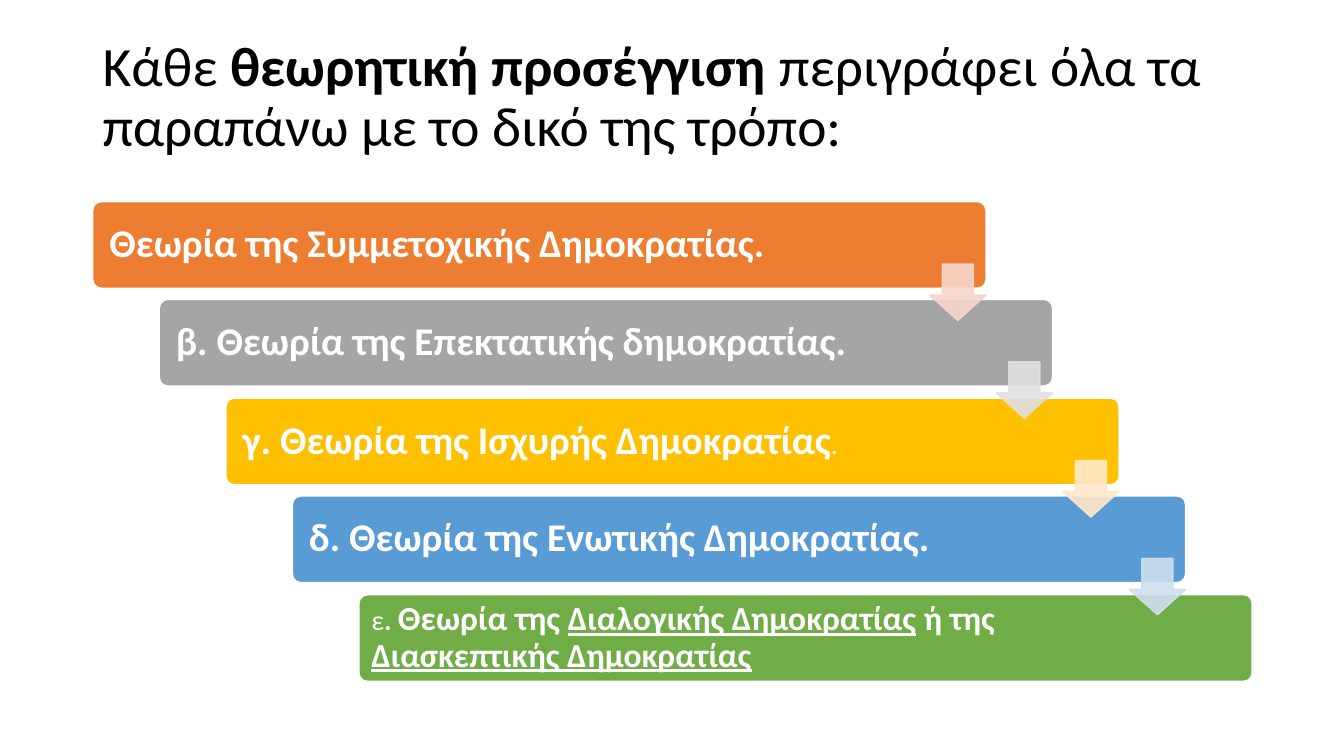
from lxml.etree import SubElement
from pptx import Presentation
from pptx.dml.color import RGBColor
from pptx.enum.shapes import MSO_SHAPE
from pptx.enum.text import MSO_ANCHOR, PP_ALIGN
from pptx.oxml.ns import qn
from pptx.util import Pt

PX = 9144  # EMU per px, 100 px to the inch

COLORS = {
    "black": "000000", "white": "FFFFFF",
    "orange": "ED7D31", "gray": "A5A5A5", "gold": "FFC000",
    "blue": "599BD5", "green": "70AD47",
    "pale_orange": "F7D5CB", "pale_gray": "E0E0E0",
    "pale_gold": "FFE8CA", "pale_blue": "CFDEEF",
}


class SlideBuilder:
    font = "Calibri"
    line_spacing = 0.9

    def __init__(self, slide):
        self.slide = slide

    def box(self, left, top, width, height):
        return [v * PX for v in (left, top, width, height)]

    def add_text(self, frame, runs, color, insets):
        """Each run is (text, size, bold, underline)."""
        frame.word_wrap = True
        frame.vertical_anchor = MSO_ANCHOR.MIDDLE
        (frame.margin_left, frame.margin_top,
         frame.margin_right, frame.margin_bottom) = [v * PX for v in insets]
        paragraph = frame.paragraphs[0]
        paragraph.alignment = PP_ALIGN.LEFT
        paragraph.line_spacing = self.line_spacing
        for text, size, bold, underline in runs:
            run = paragraph.add_run()
            run.text = text
            run.font.name = self.font
            run.font.size = Pt(size)
            run.font.bold = bold
            run.font.underline = underline
            run.font.color.rgb = RGBColor.from_string(COLORS[color])

    def title(self, place, runs):
        heading = self.slide.shapes.add_textbox(*self.box(*place))
        self.add_text(heading.text_frame, runs, "black", (10, 5, 10, 5))

    def shape(self, kind, place, adjustments, fill, line):
        shape = self.slide.shapes.add_shape(kind, *self.box(*place))
        shape.shadow.inherit = False
        for i, value in enumerate(adjustments):
            shape.adjustments[i] = value
        shape.fill.solid()
        shape.fill.fore_color.rgb = RGBColor.from_string(COLORS[fill])
        shape.line.color.rgb = RGBColor.from_string(COLORS[line])
        shape.line.width = Pt(1)
        return shape

    def bar(self, place, fill, runs, inset):
        bar = self.shape(MSO_SHAPE.ROUNDED_RECTANGLE, place, [0.1], fill, "white")
        self.add_text(bar.text_frame, runs, "white",
                      (inset + 2, inset, inset + 124, inset))

    def arrow(self, place, color):
        arrow = self.shape(MSO_SHAPE.DOWN_ARROW, place, [0.55, 0.45], color, color)
        # Slight transparency for fill and outline
        for tint in arrow.element.iter(qn("a:srgbClr")):
            SubElement(tint, qn("a:alpha"), val="90000")


def main():
    prs = Presentation()
    prs.slide_width, prs.slide_height = 1333 * PX, 750 * PX
    builder = SlideBuilder(prs.slides.add_slide(prs.slide_layouts[6]))

    # Title
    builder.title((92, 40, 1150, 115), [
        ("Κάθε ", 39.6, False, False),
        ("θεωρητική προσέγγιση", 39.6, True, False),
        (" περιγράφει όλα τα παραπάνω με το δικό της τρόπο:", 39.6, False, False),
    ])

    # Theories: fill, text inset, runs
    theories = [
        ("orange", 12, [("Θεωρία της Συμμετοχικής Δημοκρατίας.", 28, True, False)]),
        ("gray", 12, [("β. Θεωρία της Επεκτατικής δημοκρατίας.", 28, True, False)]),
        ("gold", 12, [("γ. Θεωρία της Ισχυρής Δημοκρατίας", 28, True, False),
                      (".", 20, False, False)]),
        ("blue", 12, [("δ. Θεωρία της Ενωτικής Δημοκρατίας.", 28, True, False)]),
        ("green", 8, [("ε", 20, False, False),
                      (". ", 20, True, False),
                      ("Θεωρία της ", 24, True, False),
                      ("Διαλογικής Δημοκρατίας", 24, True, True),
                      (" ή της ", 24, True, False),
                      ("Διασκεπτικής Δημοκρατίας", 24, True, True)]),
    ]

    # Staircase: each step goes 66 px right and 97.5 px down
    steps = [(66 * i, 195 * i // 2) for i in range(len(theories))]
    for (dx, dy), (fill, inset, runs) in zip(steps, theories):
        builder.bar((92 + dx, 200 + dy, 886, 86), fill, runs, inset)

    # Arrows between the steps
    arrow_colors = ["pale_orange", "pale_gray", "pale_gold", "pale_blue"]
    for (dx, dy), color in zip(steps, arrow_colors):
        builder.arrow((922 + dx, 262 + dy, 56, 56), color)

    prs.save("out.pptx")


if __name__ == "__main__":
    main()
